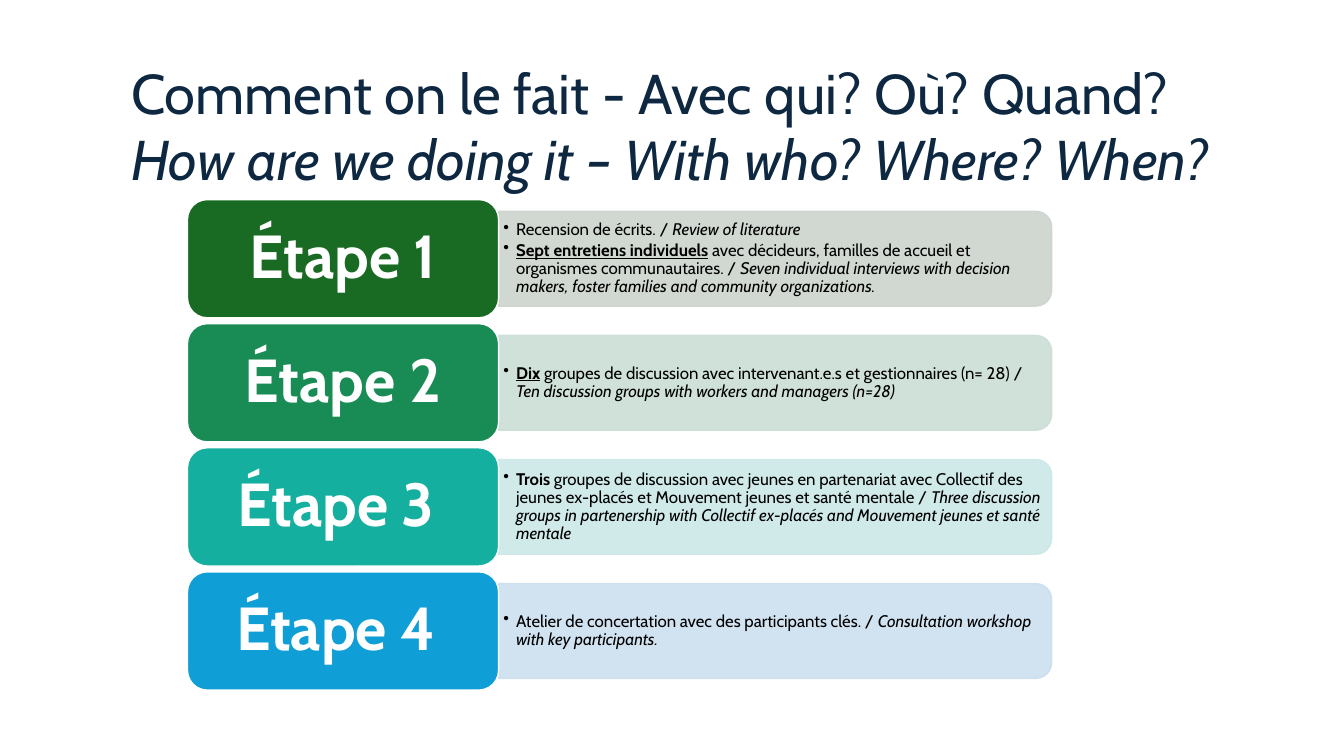
from lxml import etree
from pptx import Presentation
from pptx.dml.color import RGBColor
from pptx.enum.shapes import MSO_SHAPE
from pptx.enum.text import MSO_ANCHOR, PP_ALIGN
from pptx.oxml.ns import qn
from pptx.util import Inches, Pt

FONT = "Cabin"
NAVY = RGBColor(0x0E, 0x28, 0x41)
BLACK = RGBColor(0, 0, 0)
WHITE = RGBColor(0xFF, 0xFF, 0xFF)

TITLE = [
    [("Comment on le fait - Avec qui? Où? Quand?", "")],
    [("How are we doing it – With who? Where? When?", "i")],
]

# Label, label colour, panel colour, bullets made of (text, style) runs;
# styles: b = bold, i = italic, u = underlined
STEPS = [
    ("Étape 1", RGBColor(0x19, 0x6B, 0x24), RGBColor(0xCC, 0xD4, 0xCD), [
        [("Recension de écrits. / ", ""), ("Review of literature", "i")],
        [("Sept entretiens individuels", "bu"),
         (" avec décideurs, familles de accueil et organismes communautaires. / ", ""),
         ("Seven individual interviews with decision makers, foster families "
          "and community organizations.", "i")],
    ]),
    ("Étape 2", RGBColor(0x18, 0x8C, 0x54), RGBColor(0xCB, 0xDE, 0xD5), [
        [("Dix", "bu"),
         (" groupes de discussion avec intervenant.e.s et gestionnaires (n= 28) / ", ""),
         ("Ten discussion groups with workers and managers (n=28)", "i")],
    ]),
    ("Étape 3 ", RGBColor(0x15, 0xAF, 0x9F), RGBColor(0xCB, 0xE8, 0xE7), [
        [("Trois", "b"),
         (" groupes de discussion avec jeunes en partenariat avec Collectif des "
          "jeunes ex-placés et Mouvement jeunes et santé mentale / ", ""),
         ("Three discussion groups in partenership with Collectif ex-placés and "
          "Mouvement jeunes et santé mentale", "i")],
    ]),
    ("Étape 4 ", RGBColor(0x0F, 0x9E, 0xD5), RGBColor(0xCC, 0xDF, 0xEF), [
        [("Atelier de concertation avec des participants clés. / ", ""),
         ("Consultation workshop with key participants.", "i")],
    ]),
]

LABEL_W, LABEL_H = 4.63, 1.76
PANEL_H = 1.41


def set_frame(tf, margin_x, margin_y, anchor):
    tf.word_wrap = True
    tf.vertical_anchor = anchor
    tf.margin_left = tf.margin_right = Inches(margin_x)
    tf.margin_top = tf.margin_bottom = Inches(margin_y)


def write_paragraphs(tf, paragraphs, size, color, space_after):
    for i, runs in enumerate(paragraphs):
        p = tf.paragraphs[0] if i == 0 else tf.add_paragraph()
        p.line_spacing = 0.9
        p.space_after = Pt(space_after)
        for text, style in runs:
            r = p.add_run()
            r.text = text
            r.font.name = FONT
            r.font.size = Pt(size)
            r.font.color.rgb = color
            r.font.bold = "b" in style
            r.font.italic = "i" in style
            r.font.underline = "u" in style


def add_bullet(p, indent):
    pPr = p._p.get_or_add_pPr()
    pPr.set("marL", str(Inches(indent)))
    pPr.set("indent", str(-Inches(indent)))
    etree.SubElement(pPr, qn("a:buChar"), char="•")


def add_block(s, preset, left, top, width, height, fill, line):
    sp = s.shapes.add_shape(preset, Inches(left), Inches(top), Inches(width), Inches(height))
    sp.shadow.inherit = False
    sp.fill.solid()
    sp.fill.fore_color.rgb = fill
    sp.line.color.rgb = line
    sp.line.width = Pt(1.5)
    return sp


def add_title(s, left, top, width, height):
    box = s.shapes.add_textbox(Inches(left), Inches(top), Inches(width), Inches(height))
    tf = box.text_frame
    set_frame(tf, 0, 0, MSO_ANCHOR.TOP)
    tf.margin_left = Inches(0.56)
    write_paragraphs(tf, TITLE, 60, NAVY, 6)


def add_panel(s, left, top, width, height, color, bullets):
    """Panel rounded on its right side only, with bulleted text on it."""
    # The preset rounds its top corners, so it is drawn upright and turned by 90°
    sp = add_block(s, MSO_SHAPE.ROUND_2_SAME_RECTANGLE,
                   left + (width - height) / 2, top + (height - width) / 2,
                   height, width, color, color)
    sp.rotation = 90
    for clr in sp._element.spPr.iter(qn("a:srgbClr")):
        etree.SubElement(clr, qn("a:alpha"), val="90000")

    box = s.shapes.add_textbox(Inches(left), Inches(top + 0.07),
                               Inches(width - 0.07), Inches(height - 0.14))
    tf = box.text_frame
    set_frame(tf, 0.07, 0.04, MSO_ANCHOR.MIDDLE)
    write_paragraphs(tf, bullets, 18, BLACK, 2.7)
    for p in tf.paragraphs:
        add_bullet(p, 0.19)


def add_label(s, left, top, text, color):
    sp = add_block(s, MSO_SHAPE.ROUNDED_RECTANGLE, left, top, LABEL_W, LABEL_H, color, WHITE)
    tf = sp.text_frame
    set_frame(tf, 0.27, 0.14, MSO_ANCHOR.MIDDLE)
    write_paragraphs(tf, [[(text, "b")]], 65, WHITE, 0)
    tf.paragraphs[0].alignment = PP_ALIGN.CENTER


def add_steps(s, left, top, width, height):
    pitch = (height - LABEL_H) / (len(STEPS) - 1)
    for i, (label, label_color, panel_color, bullets) in enumerate(STEPS):
        y = top + i * pitch
        add_panel(s, left + LABEL_W, y + (LABEL_H - PANEL_H) / 2,
                  width - LABEL_W, PANEL_H, panel_color, bullets)
        add_label(s, left, y, label, label_color)


def main():
    prs = Presentation()
    prs.slide_width = Inches(20)
    prs.slide_height = Inches(11.25)
    s = prs.slides.add_slide(prs.slide_layouts[6])
    add_title(s, 1.39, 0.98, 18, 2.05)
    add_steps(s, 2.79, 2.97, 12.86, 7.3)
    prs.save("out.pptx")


if __name__ == "__main__":
    main()
